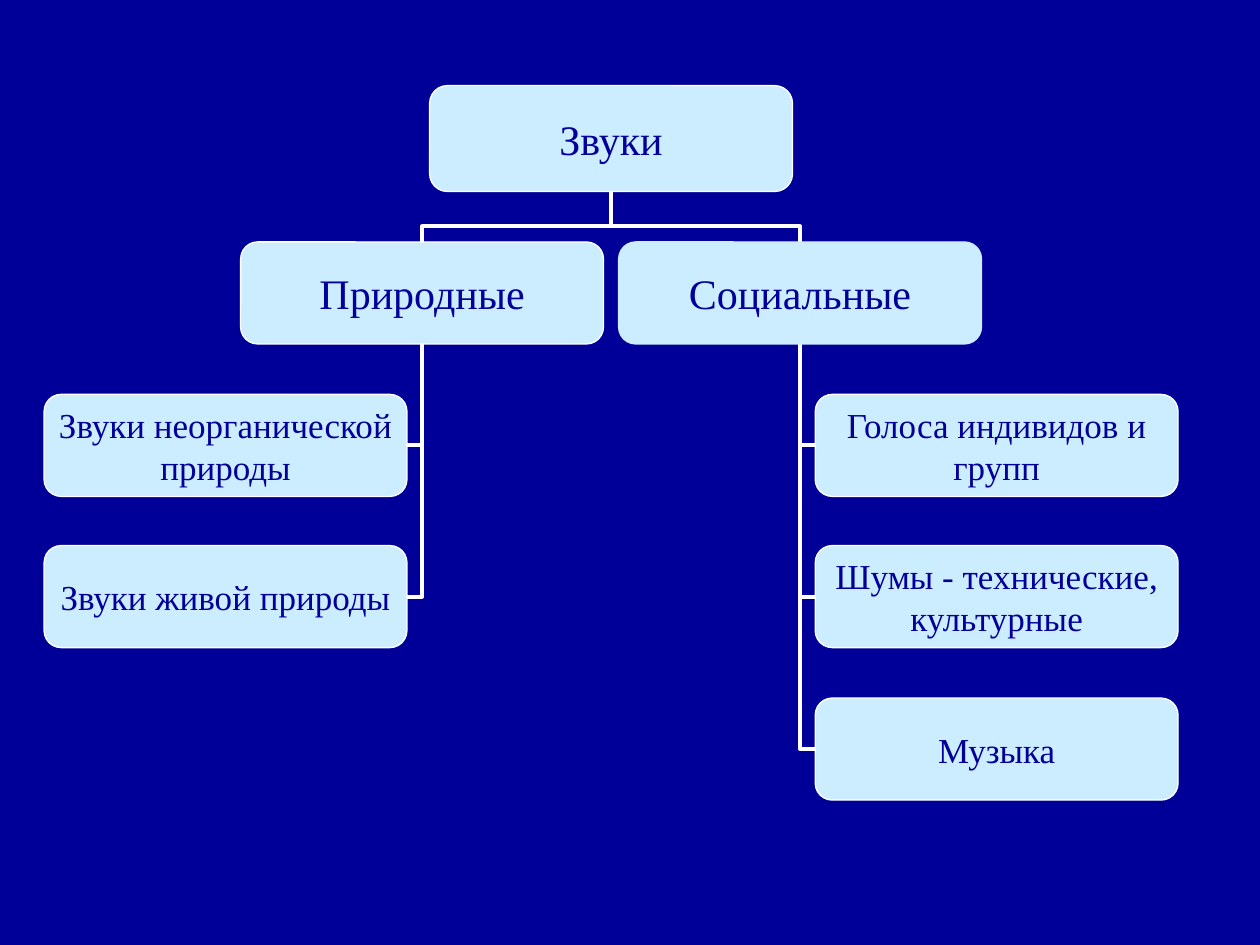
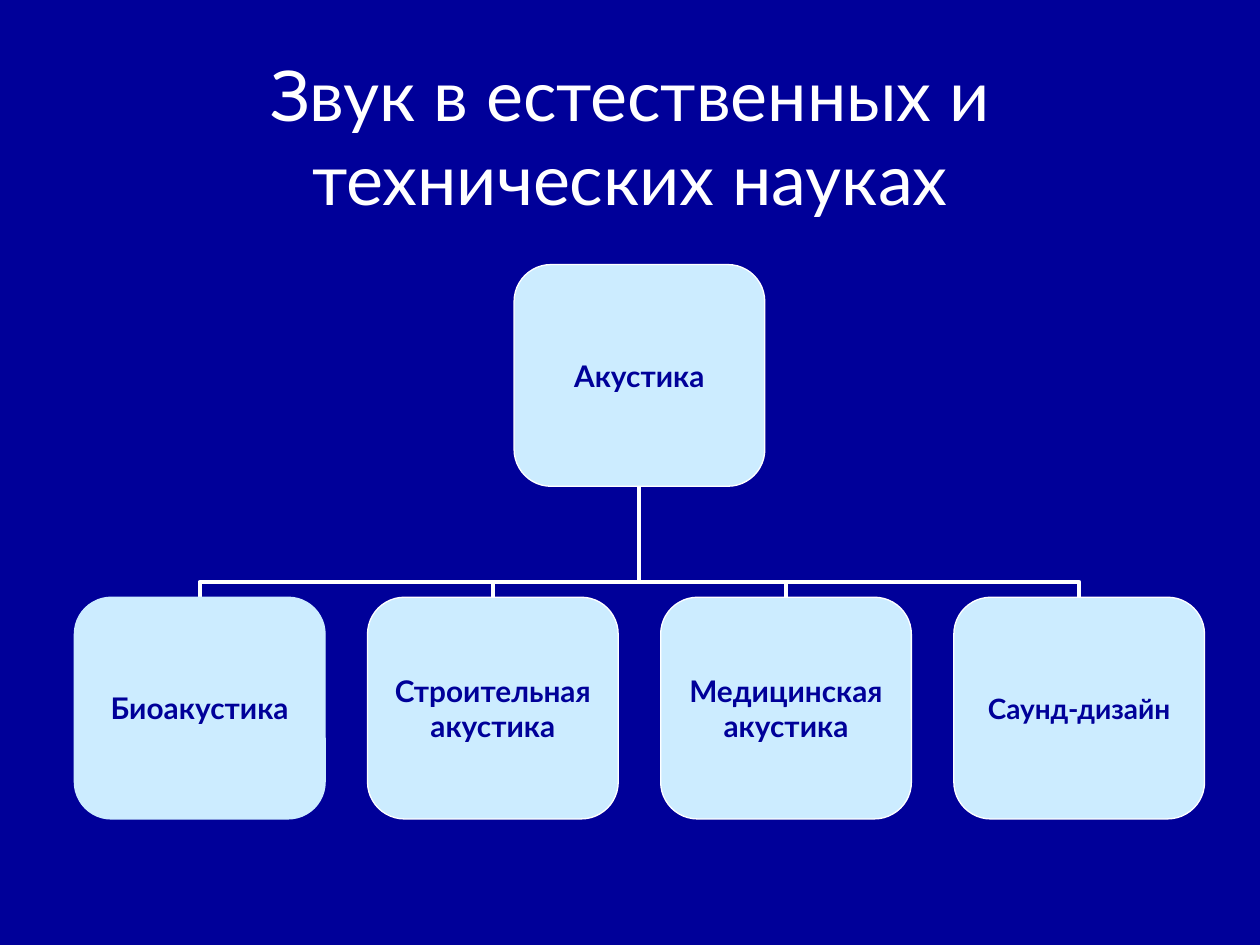
"""Build two slides that chart kinds of sounds and branches of acoustics."""
from dataclasses import dataclass

from lxml.etree import SubElement
from pptx import Presentation
from pptx.dml.color import RGBColor
from pptx.enum.shapes import MSO_CONNECTOR, MSO_SHAPE
from pptx.enum.text import MSO_ANCHOR, MSO_AUTO_SIZE, PP_ALIGN
from pptx.oxml.ns import qn
from pptx.shapes.autoshape import Shape
from pptx.slide import Slide
from pptx.util import Inches, Pt

NAVY, INK, ICE, WHITE = "000099", "010199", "CCECFF", "FFFFFF"
TOP, LEFT, BOTTOM, RIGHT = range(4)
SERIF, SANS = "Times New Roman", "Lato"


@dataclass(frozen=True)
class Node:
    left: float
    top: float
    lines: tuple[str, ...]
    size: float
    parent: int | None = None
    side: int = TOP
    height: float | None = None
    color: str = NAVY
    outline: str = WHITE


@dataclass(frozen=True)
class ChartStyle:
    font: str
    width: float
    height: float
    bend: float
    bold: bool = False
    wrap: bool = True


def rgb(color: str) -> RGBColor:
    return RGBColor.from_string(color)


def add_span(para, text: str, font: str, size: float, color: str, bold: bool = False) -> None:
    para.alignment = PP_ALIGN.CENTER
    span = para.add_run()
    span.text = text
    span.font.name = font
    span.font.size = Pt(size)
    span.font.bold = bold
    span.font.color.rgb = rgb(color)


def add_box(page: Slide, node: Node, style: ChartStyle) -> Shape:
    box = page.shapes.add_shape(
        MSO_SHAPE.ROUNDED_RECTANGLE, Inches(node.left), Inches(node.top),
        Inches(style.width), Inches(node.height or style.height))
    box.shadow.inherit = False
    box.fill.solid()
    box.fill.fore_color.rgb = rgb(ICE)
    box.line.color.rgb = rgb(node.outline)
    box.line.width = Pt(0.75)
    frame = box.text_frame
    frame.margin_left = frame.margin_right = frame.margin_top = frame.margin_bottom = 0
    frame.vertical_anchor = MSO_ANCHOR.MIDDLE
    frame.word_wrap = style.wrap
    for index, line in enumerate(node.lines):
        para = frame.add_paragraph() if index else frame.paragraphs[0]
        add_span(para, line, style.font, node.size, node.color, style.bold)
    return box


def add_branch(page: Slide, child: Shape, parent: Shape, side: int, bend: float) -> None:
    start_x = {TOP: child.left + child.width // 2, LEFT: child.left,
               RIGHT: child.left + child.width}[side]
    start_y = child.top if side == TOP else child.top + child.height // 2
    end_x = parent.left + parent.width // 2
    end_y = parent.top + parent.height
    branch = page.shapes.add_connector(MSO_CONNECTOR.ELBOW, start_x, start_y, end_x, end_y)
    branch.begin_connect(child, side)
    branch.end_connect(parent, BOTTOM)
    branch.line.color.rgb = rgb(WHITE)
    branch.line.width = Pt(2.25)
    properties = branch._element.spPr
    SubElement(properties, qn("a:effectLst"))
    frame = properties.find(qn("a:xfrm"))
    geometry = properties.find(qn("a:prstGeom"))
    across, along = abs(end_x - start_x), abs(end_y - start_y)
    from_right = start_x > end_x
    if side == TOP:
        width, height = along, across
        turn, flip_h, flip_v = (90, True, False) if from_right else (270, False, False)
        SubElement(geometry.find(qn("a:avLst")), qn("a:gd"),
                   name="adj1", fmla=f"val {round(bend * 100000)}")
    else:
        width, height = across, along
        turn, flip_h, flip_v = (180, False, False) if from_right else (0, False, True)
        geometry.set("prst", "bentConnector2")
    branch.left = (start_x + end_x - width) // 2
    branch.top = (start_y + end_y - height) // 2
    branch.width, branch.height = width, height
    frame.set("rot", str(turn * 60000))
    frame.set("flipH", str(int(flip_h)))
    frame.set("flipV", str(int(flip_v)))
    parent_tree = page.shapes[0] if not page.shapes.title else page.shapes[1]
    parent_tree._element.addprevious(branch._element)


def draw_chart(page: Slide, nodes: list[Node], style: ChartStyle) -> None:
    boxes = [add_box(page, node, style) for node in nodes]
    for node, box in zip(nodes, boxes):
        if node.parent is not None:
            add_branch(page, box, boxes[node.parent], node.side, style.bend)


def format_title(page: Slide, text: str) -> None:
    title = page.shapes.title
    title.left, title.top = Inches(0.5), Inches(0.32)
    title.width, title.height = Inches(9), Inches(1.51)
    frame = title.text_frame
    frame.auto_size = MSO_AUTO_SIZE.NONE
    frame.word_wrap = True
    frame.vertical_anchor = MSO_ANCHOR.MIDDLE
    add_span(frame.paragraphs[0], text, SANS, 40, WHITE)


def build_sounds(deck) -> None:
    page = deck.slides.add_slide(deck.slide_layouts[6])
    rows = (3.13, 4.33, 5.54)
    natural = ("Звуки неорганической природы", "Звуки живой природы")
    social = ("Голоса индивидов и групп", "Шумы - технические, культурные", "Музыка")
    nodes = [
        Node(3.41, 0.68, ("Звуки",), 24, height=0.84, color=INK),
        Node(1.91, 1.92, ("Природные",), 24, parent=0, color=INK),
        Node(4.91, 1.92, ("Социальные",), 24, parent=0, outline=ICE),
    ]
    for parent, left, side, labels in ((1, 0.35, RIGHT, natural), (2, 6.47, LEFT, social)):
        nodes += [Node(left, top, (label,), 20, parent, side)
                  for top, label in zip(rows, labels)]
    draw_chart(page, nodes, ChartStyle(SERIF, 2.88, 0.81, 0.31))


def build_acoustics(deck) -> None:
    page = deck.slides.add_slide(deck.slide_layouts[5])
    format_title(page, "Звук в естественных и технических науках")
    first, last = 0.59, 7.57
    branches = (
        (("Биоакустика",), 17, ICE),
        (("Строительная", "акустика"), 17, WHITE),
        (("Медицинская", "акустика"), 17, WHITE),
        (("Саунд-дизайн",), 16, WHITE),
    )
    step = (last - first) / (len(branches) - 1)
    nodes = [Node((first + last) / 2, 2.1, ("Акустика",), 17)]
    nodes += [Node(first + index * step, 4.74, lines, size, parent=0, outline=outline)
              for index, (lines, size, outline) in enumerate(branches)]
    draw_chart(page, nodes, ChartStyle(SANS, 1.99, 1.76, 0.14, bold=True, wrap=False))


def main() -> None:
    deck = Presentation()
    deck.slide_width, deck.slide_height = Inches(10), Inches(7.5)
    backdrop = deck.slide_master.background.fill
    backdrop.solid()
    backdrop.fore_color.rgb = rgb(NAVY)
    build_sounds(deck)
    build_acoustics(deck)
    deck.save("out.pptx")


if __name__ == "__main__":
    main()
